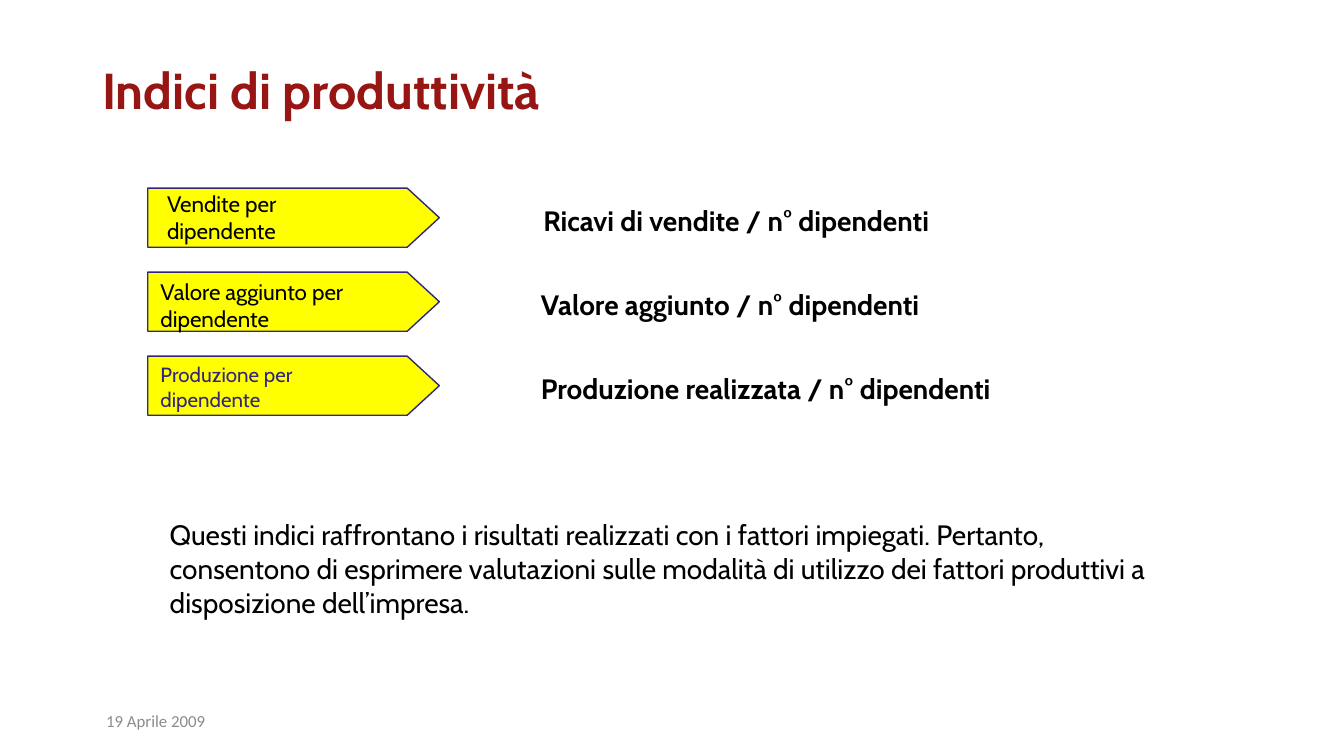
from pptx import Presentation
from pptx.dml.color import RGBColor
from pptx.enum.shapes import MSO_SHAPE
from pptx.enum.text import MSO_ANCHOR, PP_ALIGN
from pptx.util import Pt

PENTAGON = MSO_SHAPE.PENTAGON
TOP, MIDDLE, BOTTOM = MSO_ANCHOR.TOP, MSO_ANCHOR.MIDDLE, MSO_ANCHOR.BOTTOM
LEFT = PP_ALIGN.LEFT

BLACK, INDIGO, YELLOW = "000000", "31257E", "FFFF00"
RED, GREY = "971613", "8C8C8C"


def rgb(value):
    """Turn a hex string into a colour."""
    return RGBColor.from_string(value)


class SlideBuilder:
    """Hold the text style and the current slide."""

    def __init__(self, slide, font="Cabin"):
        """Keep the slide and its main font."""
        self.slide = slide
        self.font = font

    def set_text(self, sp, text, size, color=BLACK, bold=False, font=None,
                 anchor=TOP, wrap=True):
        """Fill a shape with one formatted paragraph."""
        tf = sp.text_frame
        tf.text = text
        tf.word_wrap = wrap
        tf.vertical_anchor = anchor
        tf.margin_left = tf.margin_right = Pt(6.75)
        tf.margin_top = tf.margin_bottom = Pt(3.2)
        p = tf.paragraphs[0]
        p.alignment = LEFT
        r = p.runs[0]
        r.font.name = font or self.font
        r.font.size = Pt(size)
        r.font.bold = bold
        r.font.color.rgb = rgb(color)

    def title(self, text, x, y, w, h):
        """Place and format the title placeholder."""
        sp = self.slide.shapes.title
        sp.left, sp.top, sp.width, sp.height = Pt(x), Pt(y), Pt(w), Pt(h)
        self.set_text(sp, text, 27, RED, bold=True, anchor=BOTTOM)

    def text(self, text, x, y, w, h, size, **style):
        """Add a text box."""
        sp = self.slide.shapes.add_textbox(Pt(x), Pt(y), Pt(w), Pt(h))
        self.set_text(sp, text, size, **style)

    def arrow(self, x, y, w, h):
        """Add a pentagon arrow."""
        sp = self.slide.shapes.add_shape(PENTAGON, Pt(x), Pt(y), Pt(w), Pt(h))
        sp.adjustments[0] = 0.543
        sp.shadow.inherit = False
        sp.fill.solid()
        sp.fill.fore_color.rgb = rgb(YELLOW)
        sp.line.color.rgb = rgb(INDIGO)
        sp.line.width = Pt(0.75)


def main():
    """Build and save the slide."""
    prs = Presentation()
    prs.slide_width, prs.slide_height = Pt(720), Pt(405)
    s = SlideBuilder(prs.slides.add_slide(prs.slide_layouts[5]))

    s.title("Indici di produttività", 48, 31.5, 612, 36)

    rows = [
        ("Vendite per dipendente", 82.8, -2.2, 122.4, 12, BLACK,
         "Ricavi di vendite / n° dipendenti", 284.4, 259.2),
        ("Valore aggiunto per dipendente", 79.2, 0, 138.2, 12, BLACK,
         "Valore aggiunto / n° dipendenti", 283, 255.6),
        ("Produzione per dipendente", 79.2, 0, 138.2, 11, INDIGO,
         "Produzione realizzata / n° dipendenti", 283, 297.4),
    ]
    for i, (label, x, dy, w, size, color, formula, fx, fw) in enumerate(rows):
        y = 100.8 + 45 * i
        s.arrow(79.2, y, 156.2, 31.7)
        s.text(label, x, y + dy, w, 35, size, color=color)
        s.text(formula, fx, y + 5, fw, 24.5, 15, bold=True, wrap=False)

    s.text("Questi indici raffrontano i risultati realizzati con i fattori "
           "impiegati. Pertanto, consentono di esprimere valutazioni sulle "
           "modalità di utilizzo dei fattori produttivi a disposizione "
           "dell’impresa.", 84.2, 274.3, 555, 60.5, 15)
    s.text("19 Aprile 2009", 50.1, 375.1, 162, 21.6, 9, color=GREY,
           font="Calibri", anchor=MIDDLE)

    prs.save("out.pptx")


if __name__ == "__main__":
    main()
